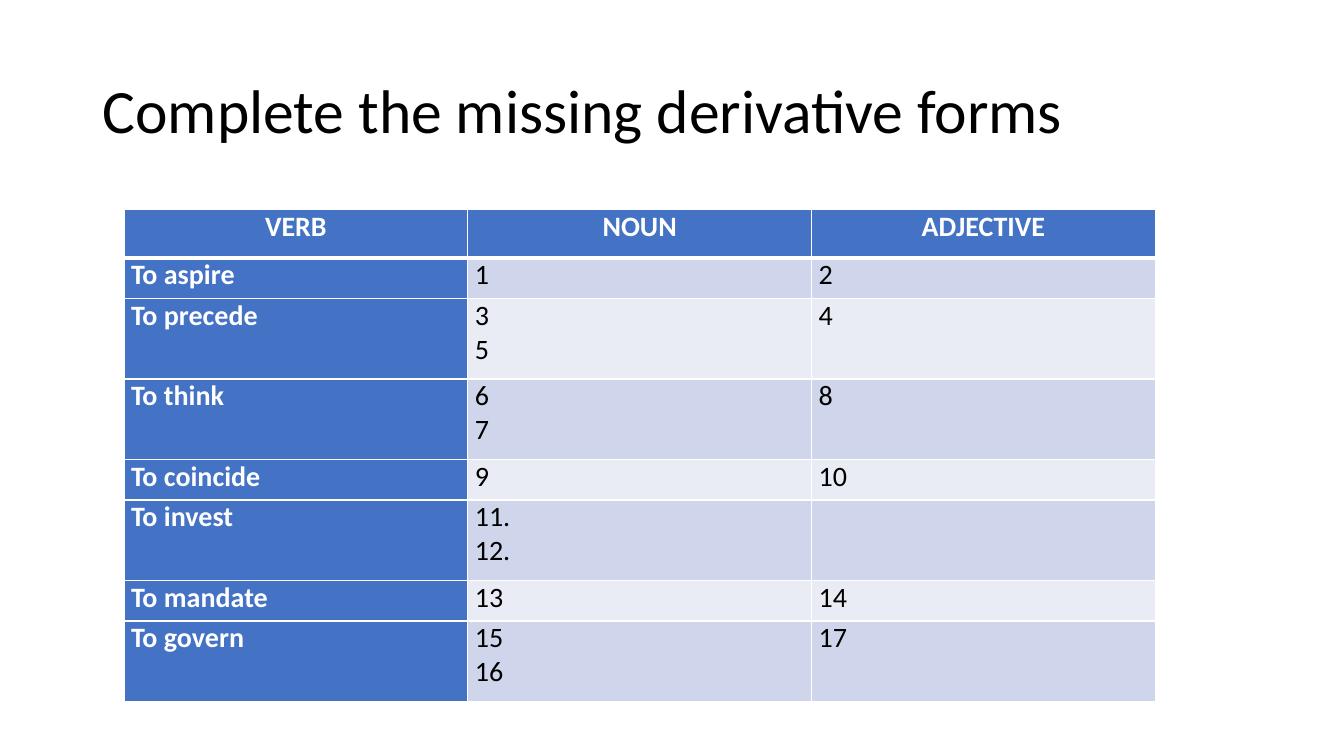
"""Build a slide with a word-formation exercise table."""
from lxml.etree import SubElement
from pptx import Presentation
from pptx.dml.color import RGBColor
from pptx.enum.text import MSO_ANCHOR, PP_ALIGN
from pptx.oxml.ns import qn
from pptx.util import Inches, Pt

COLORS = {
    "text": "000000",
    "white": "FFFFFF",
    "blue": "4472C4",
    "odd": "CFD5EA",
    "even": "E9EBF5",
}
EXERCISE = [
    ("VERB", "NOUN", "ADJECTIVE"),
    ("To aspire", "1", "2"),
    ("To precede", "3\n5", "4"),
    ("To think", "6\n7", "8"),
    ("To coincide", "9", "10"),
    ("To invest", "11.\n12.", ""),
    ("To mandate", "13", "14"),
    ("To govern", "15\n16", "17"),
]
HEADER_HEIGHT = 0.48
LINE_HEIGHT = 0.4
COLUMN_WIDTH = 3.41


def write_text(frame, text, size=20, color="text", bold=False,
               align=PP_ALIGN.LEFT, spacing=1.0):
    frame.word_wrap = True
    frame.text = text
    for paragraph in frame.paragraphs:
        paragraph.alignment = align
        paragraph.line_spacing = spacing
        paragraph.font.size = Pt(size)
        for run in paragraph.runs:
            run.font.name = "Calibri"
            run.font.size = Pt(size)
            run.font.bold = bold
            run.font.color.rgb = RGBColor.from_string(COLORS[color])


def add_border(cell, side, width):
    properties = cell._tc.get_or_add_tcPr()
    line = SubElement(properties, qn(f"a:ln{side}"), w=str(Pt(width)))
    fill = SubElement(line, qn("a:solidFill"))
    SubElement(fill, qn("a:srgbClr"), val=COLORS["white"])


presentation = Presentation()
presentation.slide_width = Inches(13.33)
presentation.slide_height = Inches(7.5)
slide = presentation.slides.add_slide(presentation.slide_layouts[6])

title = slide.shapes.add_textbox(
    Inches(0.92), Inches(0.4), Inches(11.5), Inches(1.45)).text_frame
title.vertical_anchor = MSO_ANCHOR.MIDDLE
write_text(title, "Complete the missing derivative forms", size=44, spacing=0.9)

exercise = slide.shapes.add_table(
    len(EXERCISE), 3, Inches(1.23), Inches(2.08), Inches(10.24), Inches(4.88)).table

for column in exercise.columns:
    column.width = Inches(COLUMN_WIDTH)

for row_index, words in enumerate(EXERCISE):
    is_header = row_index == 0
    line_count = max(word.count("\n") + 1 for word in words)
    height = HEADER_HEIGHT if is_header else LINE_HEIGHT * line_count
    exercise.rows[row_index].height = Inches(height)
    band = "odd" if row_index % 2 else "even"

    for column_index, word in enumerate(words):
        cell = exercise.cell(row_index, column_index)
        is_heading = is_header or column_index == 0
        cell.margin_left = cell.margin_right = Inches(0.07)
        cell.margin_top = cell.margin_bottom = 0
        write_text(cell.text_frame, word, bold=is_heading,
                   color="white" if is_heading else "text",
                   align=PP_ALIGN.CENTER if is_header else PP_ALIGN.LEFT)
        add_border(cell, "L", 1)
        add_border(cell, "R", 1)
        add_border(cell, "T", 3 if row_index == 1 else 1)
        add_border(cell, "B", 3 if is_header else 1)
        cell.fill.solid()
        cell.fill.fore_color.rgb = RGBColor.from_string(
            COLORS["blue" if is_heading else band])

presentation.save("out.pptx")
